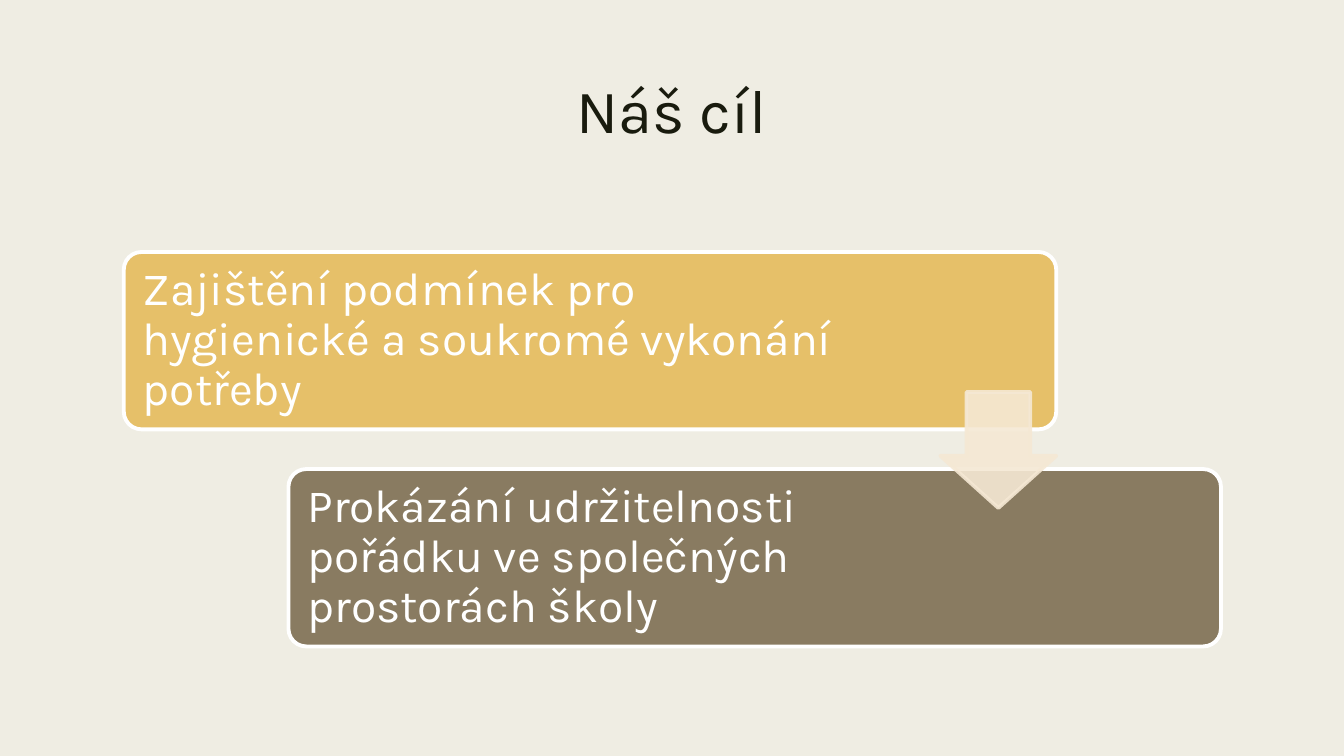
from lxml import etree
from pptx import Presentation
from pptx.dml.color import RGBColor
from pptx.enum.shapes import MSO_SHAPE
from pptx.enum.text import MSO_ANCHOR, PP_ALIGN
from pptx.oxml.ns import qn
from pptx.util import Cm, Pt

ROUNDED = MSO_SHAPE.ROUNDED_RECTANGLE
DOWN_ARROW = MSO_SHAPE.DOWN_ARROW
TOP, MIDDLE = MSO_ANCHOR.TOP, MSO_ANCHOR.MIDDLE
LEFT, CENTER = PP_ALIGN.LEFT, PP_ALIGN.CENTER

COLORS = {
    "background": "EFEDE3",
    "title": "191B0E",
    "gold": "E6C069",
    "brown": "897B61",
    "white": "FFFFFF",
    "arrow": "F5E8D4",
}


def set_text(shape, text, size, color, align, anchor, spacing):
    frame = shape.text_frame
    frame.text = text
    frame.word_wrap = True
    frame.vertical_anchor = anchor
    para = frame.paragraphs[0]
    para.alignment = align
    para.line_spacing = spacing
    font = para.runs[0].font
    font.name = "Karla"
    font.size = Pt(size)
    font.color.rgb = RGBColor.from_string(COLORS[color])


def add_block(kind, left, top, width, height, fill, line):
    shape = page.shapes.add_shape(kind, Cm(left), Cm(top), Cm(width), Cm(height))
    shape.shadow.inherit = False
    shape.fill.solid()
    shape.fill.fore_color.rgb = RGBColor.from_string(COLORS[fill])
    shape.line.color.rgb = RGBColor.from_string(COLORS[line])
    shape.line.width = Pt(2.75)
    return shape


deck = Presentation()
deck.slide_width, deck.slide_height = Cm(33.87), Cm(19.05)
page = deck.slides.add_slide(deck.slide_layouts[5])
page.background.fill.solid()
page.background.fill.fore_color.rgb = RGBColor.from_string(COLORS["background"])

# Title
title = page.shapes.title
title.left, title.top, title.width, title.height = Cm(1.78), Cm(1.9), Cm(30.3), Cm(4.11)
set_text(title, "Náš cíl", 44, "title", CENTER, TOP, 0.89)

# Two goal cards, each a step lower and further right
card_left, card_top, card_width, card_height = 3.12, 6.35, 23.5, 4.47
step_right, step_down = 4.15, 5.47
goals = [
    ("Zajištění podmínek pro hygienické a soukromé vykonání potřeby", "gold", 4.75),
    ("Prokázání udržitelnosti pořádku ve společných prostorách školy", "brown", 7.42),
]
for index, (goal, fill, right_inset) in enumerate(goals):
    card = add_block(ROUNDED, card_left + index * step_right, card_top + index * step_down,
                     card_width, card_height, fill, "white")
    card.adjustments[0] = 0.1
    set_text(card, goal, 33, "white", LEFT, MIDDLE, 0.9)
    frame = card.text_frame
    frame.margin_left = frame.margin_top = frame.margin_bottom = Cm(0.35)
    frame.margin_right = Cm(right_inset)

# Translucent arrow, flush with the right edge of the first card
arrow_size = 2.92
arrow = add_block(DOWN_ARROW, card_left + card_width - arrow_size, 9.88,
                  arrow_size, arrow_size, "arrow", "arrow")
arrow.adjustments[0] = 0.55
arrow.adjustments[1] = 0.45
for color in arrow.element.spPr.iter(qn("a:srgbClr")):
    etree.SubElement(color, qn("a:alpha")).set("val", "90000")

deck.save("out.pptx")
